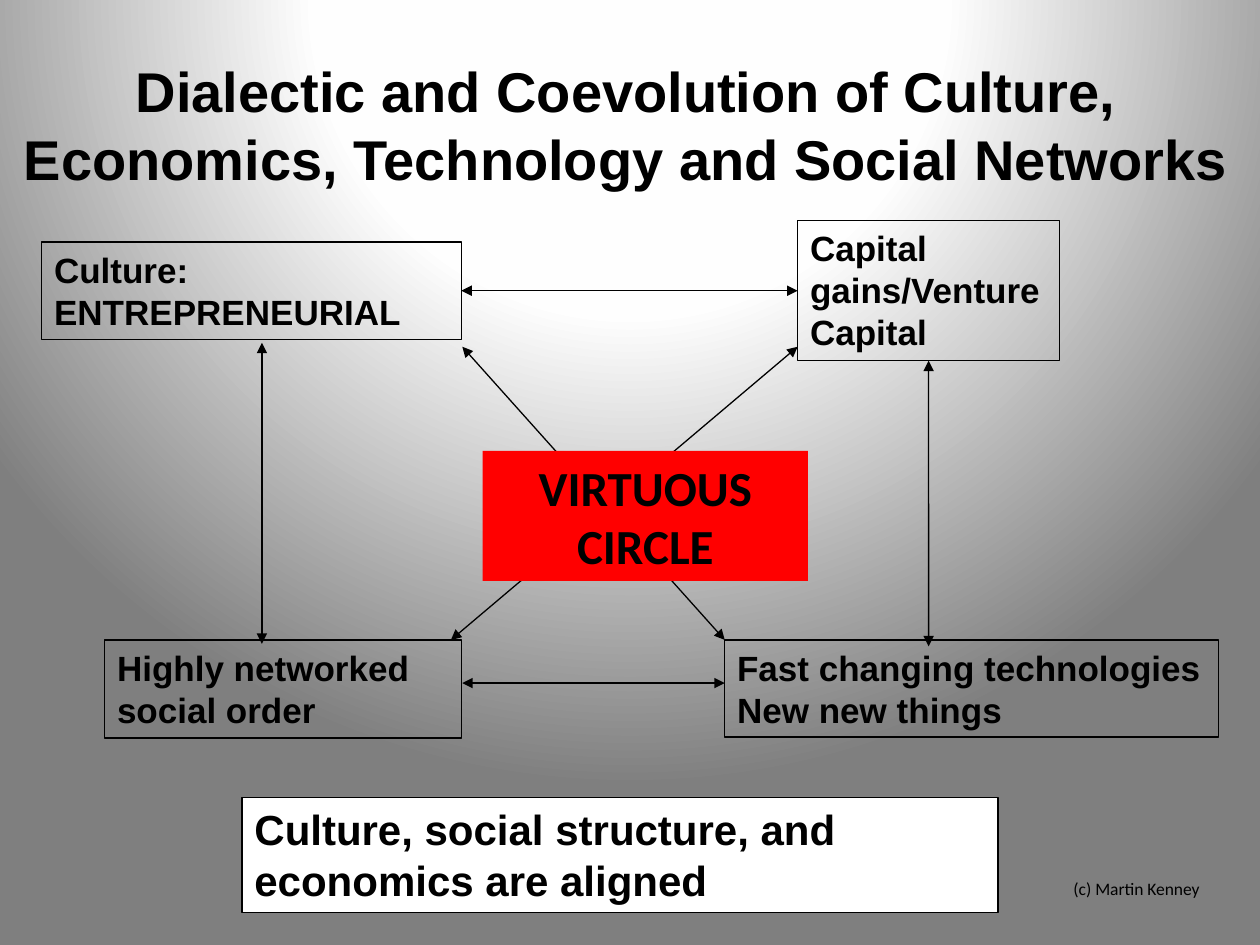
from lxml import etree
from pptx import Presentation
from pptx.dml.color import RGBColor
from pptx.enum.shapes import MSO_CONNECTOR, MSO_SHAPE
from pptx.enum.text import MSO_ANCHOR, MSO_AUTO_SIZE, PP_ALIGN
from pptx.oxml.ns import qn
from pptx.util import Cm, Pt

BLACK = RGBColor(0x00, 0x00, 0x00)
WHITE = RGBColor(0xFF, 0xFF, 0xFF)
RED = RGBColor(0xFF, 0x00, 0x00)
NEAR_WHITE = RGBColor(0xFE, 0xFE, 0xFE)
GRAY = RGBColor(0x7F, 0x7F, 0x7F)

LEFT, CENTER = PP_ALIGN.LEFT, PP_ALIGN.CENTER
TOP, MIDDLE = MSO_ANCHOR.TOP, MSO_ANCHOR.MIDDLE
NO_FIT, GROW = MSO_AUTO_SIZE.NONE, MSO_AUTO_SIZE.SHAPE_TO_FIT_TEXT
RECTANGLE = MSO_SHAPE.RECTANGLE
STRAIGHT = MSO_CONNECTOR.STRAIGHT
SIDE_LEFT, SIDE_BOTTOM, SIDE_RIGHT = 1, 2, 3


def set_background(s):
    fill = s.background.fill
    fill.gradient()
    grad = s.background._cSld.find(".//" + qn("a:gradFill"))
    for child in list(grad):
        grad.remove(child)
    stops = etree.SubElement(grad, qn("a:gsLst"))
    for pos, color in ((0, WHITE), (40, NEAR_WHITE), (100, GRAY)):
        stop = etree.SubElement(stops, qn("a:gs"), pos=str(pos * 1000))
        etree.SubElement(stop, qn("a:srgbClr"), val=str(color))
    shade = etree.SubElement(grad, qn("a:path"))
    shade.set("path", "circle")
    etree.SubElement(shade, qn("a:fillToRect"),
                     l="50000", t="-80000", r="50000", b="180000")


def set_text(sp, text, size, font="Arial", bold=True, align=LEFT,
             anchor=TOP, fit=GROW):
    tf = sp.text_frame
    tf.text = text
    tf.word_wrap = True
    tf.auto_size = fit
    tf.vertical_anchor = anchor
    for p in tf.paragraphs:
        p.alignment = align
        for r in p.runs:
            r.font.name = font
            r.font.size = Pt(size)
            r.font.bold = bold
            r.font.color.rgb = BLACK


def set_title(s, text, left, top, width, height):
    sp = s.shapes.title
    sp.left, sp.top, sp.width, sp.height = map(Cm, (left, top, width, height))
    set_text(sp, text, 32, align=CENTER, anchor=MIDDLE, fit=NO_FIT)


def add_box(s, text, left, top, width, height, size=20, fill=None,
            outlined=True, **style):
    sp = s.shapes.add_shape(RECTANGLE, *map(Cm, (left, top, width, height)))
    sp.shadow.inherit = False
    if fill is None:
        sp.fill.background()
    else:
        sp.fill.solid()
        sp.fill.fore_color.rgb = fill
    if outlined:
        sp.line.color.rgb = BLACK
        sp.line.width = Pt(0.75)
    else:
        sp.line.fill.background()
    set_text(sp, text, size, **style)
    return sp


def add_credit(s, text, left, top, width, height):
    sp = s.shapes.add_textbox(*map(Cm, (left, top, width, height)))
    set_text(sp, text, 10, font="Calibri", bold=False)


def add_double_arrow(s, x1, y1, x2, y2):
    line = s.shapes.add_connector(STRAIGHT, *map(Cm, (x1, y1, x2, y2)))
    line.line.color.rgb = BLACK
    line.line.width = Pt(0.75)
    ln = line.line._get_or_add_ln()
    for end in ("a:headEnd", "a:tailEnd"):
        etree.SubElement(ln, qn(end), type="triangle")
    etree.SubElement(line._element.spPr, qn("a:effectLst"))
    return line


def main():
    prs = Presentation()
    prs.slide_width, prs.slide_height = Cm(25.4), Cm(19.05)
    s = prs.slides.add_slide(prs.slide_layouts[5])
    set_background(s)
    set_title(s, "Dialectic and Coevolution of Culture, Economics, "
              "Technology and Social Networks", -0.15, 1.14, 25.55, 2.72)

    add_box(s, "Fast changing technologies\nNew new things",
            14.61, 12.9, 9.96, 1.96)
    capital = add_box(s, "Capital gains/Venture Capital",
                      16.08, 4.45, 5.28, 2.82)
    culture = add_box(s, "Culture: ENTREPRENEURIAL", 0.84, 4.88, 8.46, 1.96)
    add_box(s, "Culture, social structure, and economics are aligned",
            4.88, 16.08, 15.24, 2.31, size=24, fill=WHITE)
    add_credit(s, "(c) Martin Kenney", 21.39, 17.58, 3.38, 0.69)
    add_box(s, "Highly networked social order", 2.11, 12.9, 7.19, 1.98)

    add_double_arrow(s, 5.28, 6.91, 5.28, 12.98)
    culture_capital = add_double_arrow(s, 9.3, 5.86, 16.08, 5.86)
    culture_capital.begin_connect(culture, SIDE_RIGHT)
    culture_capital.end_connect(capital, SIDE_LEFT)
    capital_technology = add_double_arrow(s, 18.72, 7.27, 18.72, 13.03)
    capital_technology.begin_connect(capital, SIDE_BOTTOM)
    add_double_arrow(s, 9.32, 13.77, 14.61, 13.77)
    add_double_arrow(s, 9.32, 6.99, 14.61, 12.9)
    add_double_arrow(s, 16.08, 6.99, 9.09, 12.9)

    add_box(s, "VIRTUOUS CIRCLE", 9.73, 9.09, 6.56, 2.62, size=28, fill=RED,
            outlined=False, font="Calibri", align=CENTER)
    prs.save("out.pptx")


if __name__ == "__main__":
    main()
